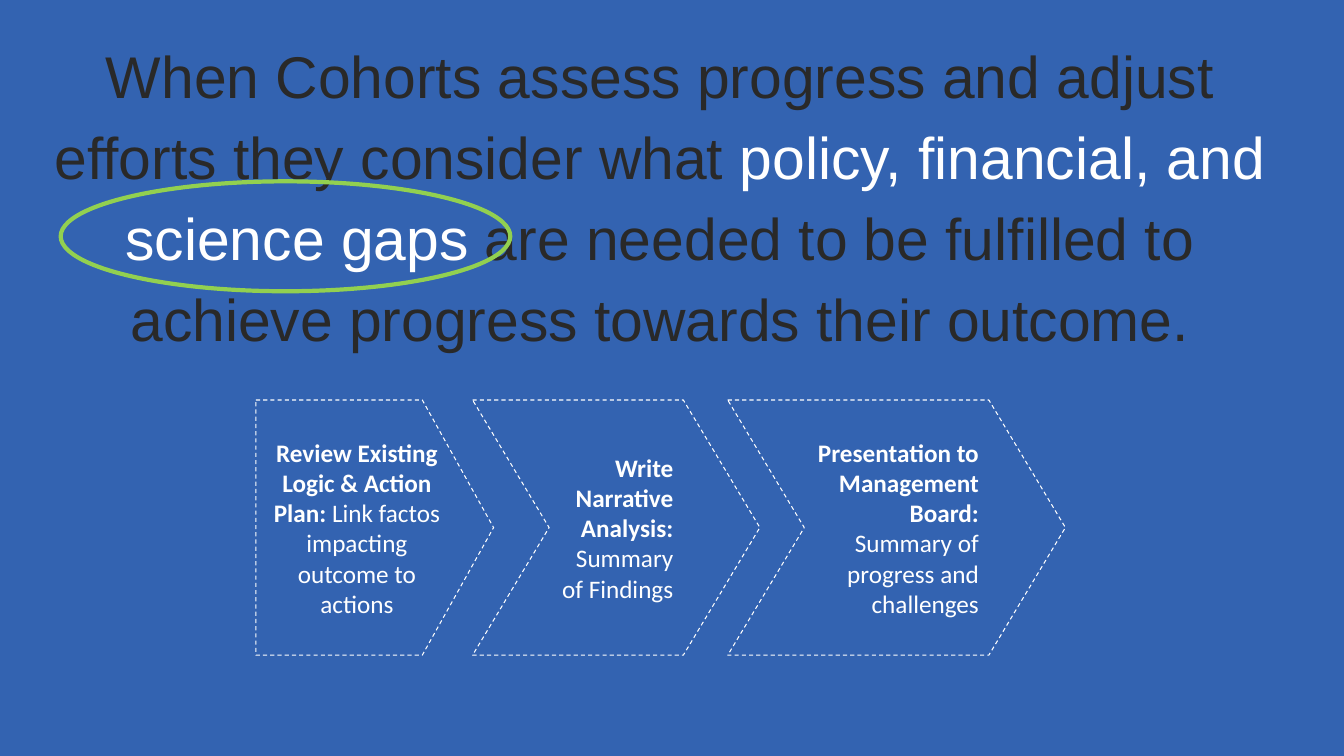
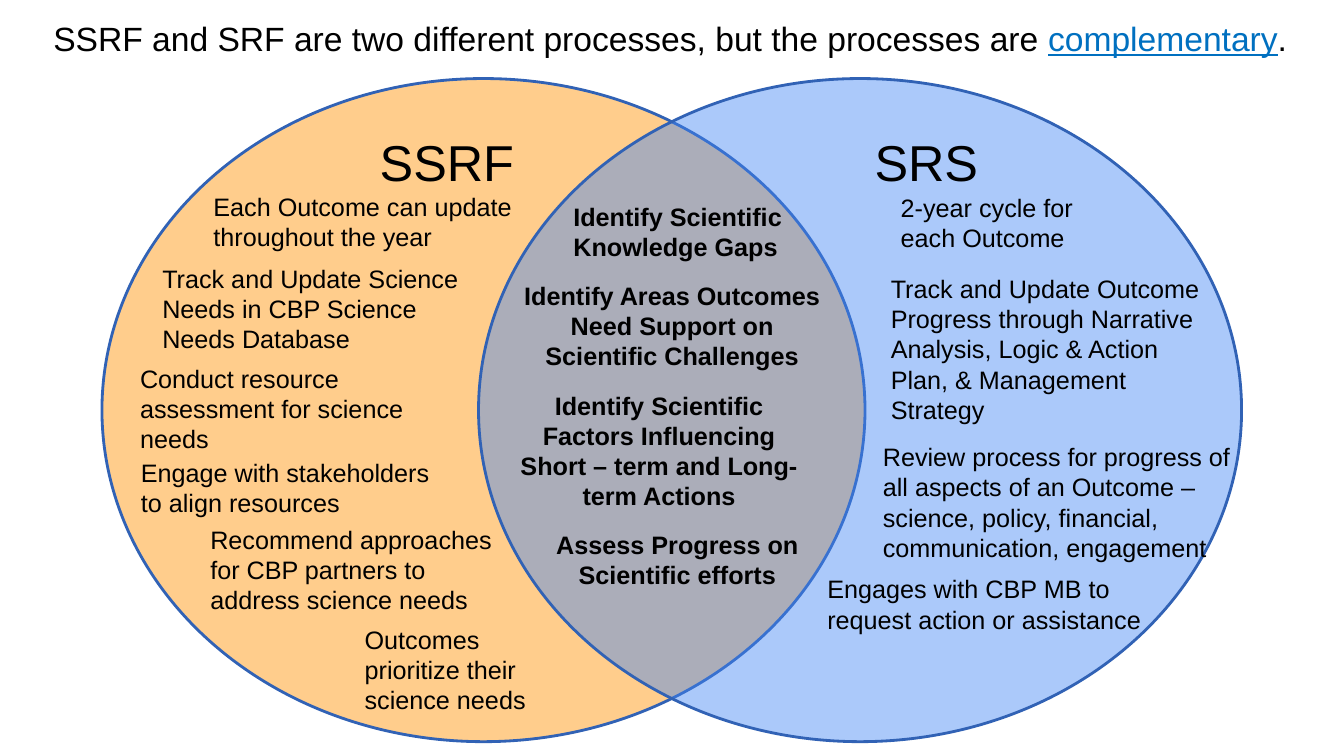
"""Build two slides: the steps of a Cohort review and a Venn diagram of SSRF and SRS."""
from dataclasses import dataclass
from typing import Any

from lxml import etree
from pptx import Presentation
from pptx.dml.color import RGBColor
from pptx.enum.dml import MSO_LINE
from pptx.enum.shapes import MSO_SHAPE
from pptx.enum.text import MSO_ANCHOR, MSO_AUTO_SIZE, PP_ALIGN
from pptx.oxml.ns import qn
from pptx.util import Cm, Pt

BLUE = RGBColor(0x33, 0x63, 0xB1)
OUTLINE = RGBColor(0x31, 0x62, 0xB5)
SKY = RGBColor(0x42, 0x85, 0xF4)
ORANGE = RGBColor(0xFF, 0xCD, 0x8C)
GREEN = RGBColor(0x92, 0xD0, 0x50)
LINK_BLUE = RGBColor(0x00, 0x70, 0xC0)
DARK = RGBColor(0x29, 0x29, 0x29)
BLACK = RGBColor(0x00, 0x00, 0x00)
WHITE = RGBColor(0xFF, 0xFF, 0xFF)

LEFT, CENTER, RIGHT = PP_ALIGN.LEFT, PP_ALIGN.CENTER, PP_ALIGN.RIGHT
TOP, MIDDLE = MSO_ANCHOR.TOP, MSO_ANCHOR.MIDDLE
FIXED, GROW = MSO_AUTO_SIZE.NONE, MSO_AUTO_SIZE.SHAPE_TO_FIT_TEXT
PENTAGON, CHEVRON, OVAL = MSO_SHAPE.PENTAGON, MSO_SHAPE.CHEVRON, MSO_SHAPE.OVAL
DASH = MSO_LINE.DASH

TITLE_ONLY = 5
STEP_TOP, STEP_HEIGHT, STEP_POINT = 10.08, 6.43, 0.3
CIRCLE_TOP, CIRCLE_WIDTH, CIRCLE_HEIGHT = 1.98, 19.23, 16.71
NOTE_PADDING, NOTE_LINE = 0.25, 0.77

TITLE_FRAME = {"word_wrap": True, "auto_size": FIXED, "vertical_anchor": TOP}
NOTE_FRAME = {"word_wrap": True, "auto_size": GROW}
STEP_FRAME = {"word_wrap": True, "vertical_anchor": MIDDLE}
STEP_FRAME |= {f"margin_{side}": Cm(0.25) for side in ("left", "top", "right", "bottom")}
STATEMENT_FONT = {"name": "Arial", "size": Pt(42)}
SENTENCE_FONT = {"name": "Arial", "size": Pt(24)}
HEADING_FONT = {"name": "Arial", "size": Pt(36)}
NOTE_FONT = {"name": "Arial", "size": Pt(18)}
SHARED_FONT = {"name": "Arial", "size": Pt(18), "bold": True}
STEP_FONT = {"name": "Calibri", "size": Pt(18)}


@dataclass(frozen=True)
class Span:
    """A run of text with its colour and extra font values."""

    text: str
    color: RGBColor = BLACK
    bold: bool = False
    underline: bool = False


@dataclass(frozen=True)
class Step:
    """An arrow-shaped step of the review, in centimetres."""

    kind: Any
    left: float
    width: float
    align: Any
    name: str
    detail: str


@dataclass(frozen=True)
class Note:
    """A text in the diagram, in centimetres, as high as its lines."""

    text: str
    left: float
    top: float
    width: float
    lines: int = 2
    align: Any = LEFT


STEPS = (
    Step(PENTAGON, 6.45, 5.99, CENTER, "Review Existing Logic & Action Plan: ",
         "Link factos impacting outcome to actions"),
    Step(CHEVRON, 11.91, 7.24, RIGHT, "Write Narrative Analysis: ", "Summary of Findings"),
    Step(CHEVRON, 18.34, 8.51, RIGHT, "Presentation to Management Board: ",
         "Summary of progress and challenges"),
)
HEADINGS = (
    Note("SSRF", 9.32, 3.18, 5.72),
    Note("SRS", 21.79, 3.18, 5.72),
)
SHARED_NOTES = (
    Note("Identify Scientific Knowledge Gaps", 14.2, 4.95, 6.22),
    Note("Identify Areas Outcomes Need Support on Scientific Challenges",
         12.75, 6.93, 8.38, 3, CENTER),
    Note("Identify Scientific Factors Influencing Short – term and Long-term Actions",
         12.8, 9.7, 7.62, 4, CENTER),
    Note("Assess Progress on Scientific efforts", 13.26, 13.21, 7.62, 2, CENTER),
)
SIDE_NOTES = (
    Note("Each Outcome can update throughout the year", 5.13, 4.7, 8.61),
    Note("Track and Update Science Needs in CBP Science Needs Database", 3.84, 6.5, 8.1, 3),
    Note("Conduct resource assessment for science needs", 3.28, 9.02, 8.71, 3),
    Note("Engage with stakeholders to align resources", 3.3, 11.4, 8.38),
    Note("Recommend approaches for CBP partners to address science needs",
         5.05, 13.08, 7.75, 3),
    Note("Outcomes prioritize their science needs", 8.94, 15.6, 5.72, 3),
    Note("2-year cycle for each Outcome", 22.45, 4.72, 5.72),
    Note("Track and Update Outcome Progress through Narrative Analysis, "
         "Logic & Action Plan, & Management Strategy", 22.2, 6.76, 8.81, 5),
    Note("Review process for progress of all aspects of an Outcome – science, policy, "
         "financial, communication, engagement", 22, 11, 9.65, 4),
    Note("Engages with CBP MB to request action or assistance", 20.6, 14.33, 9.65),
)


def apply_format(target: Any, values: dict[str, Any]) -> None:
    """Set each named value on the target."""
    for name, value in values.items():
        setattr(target, name, value)


def write(box: Any, spans: list[Span], font: dict[str, Any], frame: dict[str, Any],
          align: Any = LEFT) -> Any:
    """Fill a box with one paragraph of spans and return the paragraph."""
    apply_format(box.text_frame, frame)
    para = box.text_frame.paragraphs[0]
    para.alignment = align
    for span in spans:
        run = para.add_run()
        run.text = span.text
        apply_format(run.font, {"bold": span.bold, "underline": span.underline} | font)
        run.font.color.rgb = span.color
    return para


def add_page(deck: Any, background: RGBColor) -> Any:
    """Add a page with a title and a plain background."""
    page = deck.slides.add_slide(deck.slide_layouts[TITLE_ONLY])
    page.background.fill.solid()
    page.background.fill.fore_color.rgb = background
    return page


def place_title(page: Any, left: float, top: float, width: float, height: float) -> Any:
    """Move the title placeholder and return it."""
    title = page.shapes.title
    apply_format(title, {"left": Cm(left), "top": Cm(top),
                         "width": Cm(width), "height": Cm(height)})
    return title


def add_outlined(page: Any, kind: Any, left: float, top: float, width: float, height: float,
                 color: RGBColor, weight: float) -> Any:
    """Add an unfilled preset shape with a coloured outline."""
    shape = page.shapes.add_shape(kind, Cm(left), Cm(top), Cm(width), Cm(height))
    shape.shadow.inherit = False
    shape.fill.background()
    shape.line.color.rgb = color
    shape.line.width = Pt(weight)
    return shape


def add_step(page: Any, step: Step) -> None:
    """Add a dashed arrow with its bold name and its detail."""
    arrow = add_outlined(page, step.kind, step.left, STEP_TOP, step.width, STEP_HEIGHT,
                         WHITE, 0.75)
    arrow.line.dash_style = DASH
    arrow.adjustments[0] = STEP_POINT
    spans = [Span(step.name, WHITE, bold=True), Span(step.detail, WHITE)]
    write(arrow, spans, STEP_FONT, STEP_FRAME, step.align)


def add_circle(page: Any, left: float, color: RGBColor, opacity: int = 100) -> None:
    """Add a filled circle of the diagram, see-through below full opacity."""
    circle = add_outlined(page, OVAL, left, CIRCLE_TOP, CIRCLE_WIDTH, CIRCLE_HEIGHT,
                          OUTLINE, 2)
    circle.fill.solid()
    circle.fill.fore_color.rgb = color
    if opacity < 100:
        tint = circle.element.spPr.find(qn("a:solidFill")).find(qn("a:srgbClr"))
        etree.SubElement(tint, qn("a:alpha")).set("val", str(opacity * 1000))


def add_note(page: Any, note: Note, font: dict[str, Any]) -> None:
    """Add a text box for a note."""
    height = NOTE_PADDING + note.lines * NOTE_LINE
    box = page.shapes.add_textbox(Cm(note.left), Cm(note.top), Cm(note.width), Cm(height))
    write(box, [Span(note.text)], font, NOTE_FRAME, note.align)


def build_steps_page(deck: Any) -> None:
    """Build the page with the statement and the three steps."""
    page = add_page(deck, BLUE)
    title = place_title(page, 0, 0.4, 32.77, 9.7)
    frame = TITLE_FRAME | {"margin_left": Cm(0.82), "margin_right": Cm(0.33),
                           "margin_top": Cm(0.33), "margin_bottom": Cm(0.33)}
    spans = [
        Span("When Cohorts assess progress and adjust efforts they consider what ", DARK),
        Span("policy, financial, and science gaps ", WHITE),
        Span("are needed to be fulfilled to achieve progress towards their outcome.", DARK),
    ]
    write(title, spans, STATEMENT_FONT, frame, CENTER).line_spacing = 1.15
    for step in STEPS:
        add_step(page, step)
    add_outlined(page, OVAL, 1.53, 4.57, 11.33, 2.77, GREEN, 3)


def build_venn_page(deck: Any) -> None:
    """Build the page with the two overlapping circles."""
    page = add_page(deck, WHITE)
    title = place_title(page, 1.09, 0.33, 36.3, 1.27)
    spans = [
        Span("SSRF and SRF are two different processes, but the processes are "),
        Span("complementary", LINK_BLUE, underline=True),
        Span("."),
    ]
    write(title, spans, SENTENCE_FONT, TITLE_FRAME)
    add_circle(page, 2.57, ORANGE)
    add_circle(page, 12.06, SKY, 44)
    for notes, font in ((HEADINGS, HEADING_FONT), (SHARED_NOTES, SHARED_FONT),
                        (SIDE_NOTES, NOTE_FONT)):
        for note in notes:
            add_note(page, note, font)


def main() -> None:
    """Build and save the deck."""
    deck = Presentation()
    deck.slide_width, deck.slide_height = Cm(33.87), Cm(19.05)
    build_steps_page(deck)
    build_venn_page(deck)
    deck.save("out.pptx")


if __name__ == "__main__":
    main()
